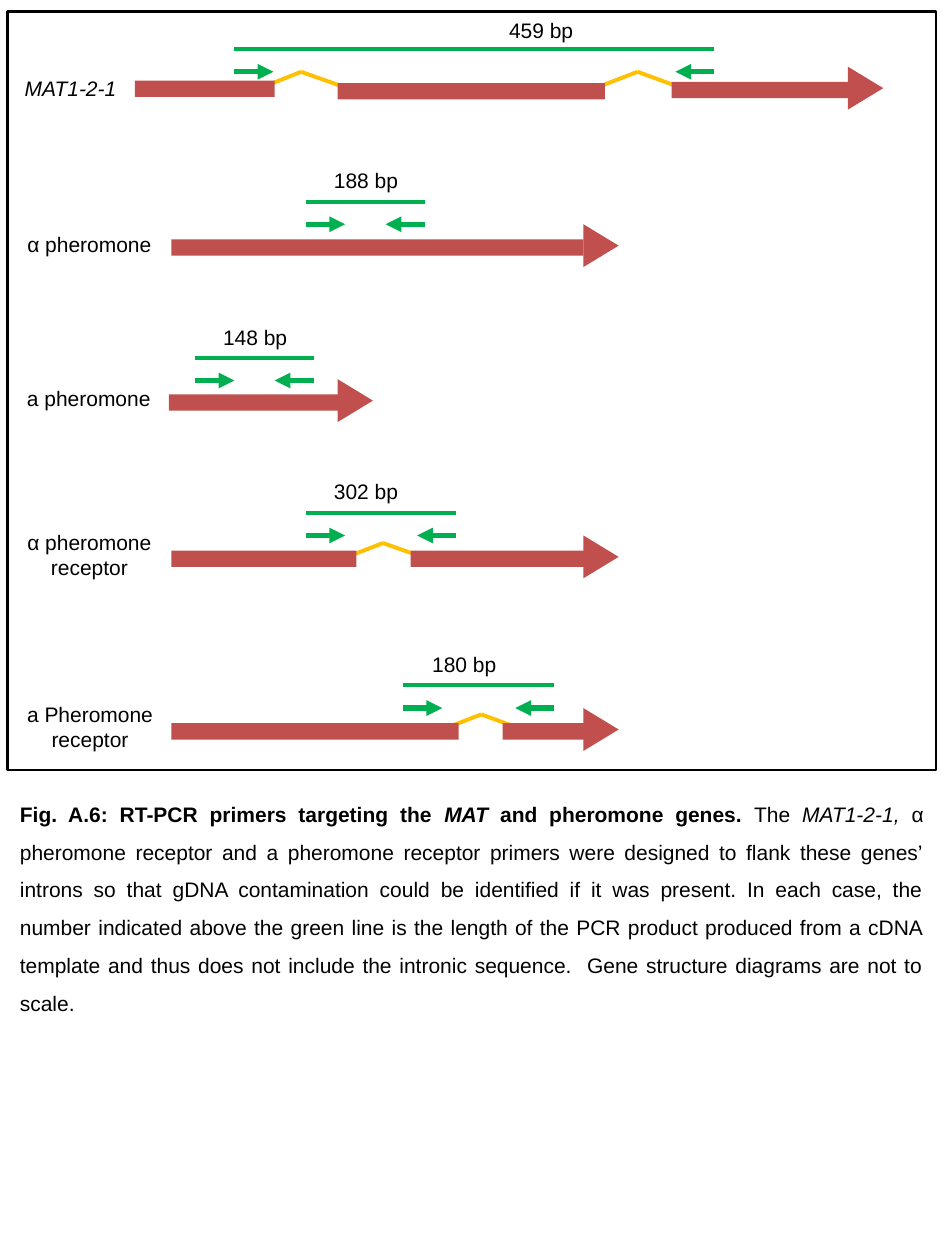
from dataclasses import dataclass
from typing import NamedTuple

from lxml import etree
from pptx import Presentation
from pptx import util as u
from pptx.dml.color import RGBColor
from pptx.enum import shapes, text
from pptx.oxml.ns import qn


@dataclass(frozen=True)
class Theme:
    font: str = "Arial"
    size: float = 12
    ink: str = "000000"
    exon: str = "C0504D"
    tip: str = "C14F4D"
    intron: str = "FFC000"
    primer: str = "00B050"
    thin: float = 2.25
    thick: float = 3
    border: float = 1.5


class Box(NamedTuple):
    left: float
    top: float
    width: float
    height: float


class Exon(NamedTuple):
    left: float
    top: float
    width: float


class Intron(NamedTuple):
    start: float
    apex: float
    end: float
    top: float


class Run(NamedTuple):
    wording: str
    bold: bool = False
    italic: bool = False


@dataclass(frozen=True)
class Gene:
    name: tuple[str, ...]
    name_box: Box
    exons: tuple[Exon, ...]
    tip_left: float
    product: str
    product_left: float
    product_top: float
    amplicon: tuple[float, float]
    amplicon_y: float
    introns: tuple[Intron, ...] = ()
    italic: bool = False


THEME = Theme()
EXON_HEIGHT = 0.13
TIP_WIDTH, TIP_HEIGHT = 0.34, 0.28
PRIMER_LENGTH = 0.31
PRIMER_DROP = 0.18
FRAME = Box(0.06, 0.09, 7.37, 6.02)
CAPTION_BOX = Box(0.06, 6.21, 7.37, 1.58)

GENES = (
    Gene(("MAT1-2-1",), Box(0.09, 0.55, 0.94, 0.3),
         (Exon(1.07, 0.64, 1.11), Exon(2.68, 0.66, 2.12), Exon(5.33, 0.65, 1.41)),
         6.7, "459 bp", 3.94, 0.09, (1.86, 5.67), 0.39,
         (Intron(2.09, 2.39, 2.7, 0.57), Intron(4.75, 5.06, 5.36, 0.57)), True),
    Gene(("α pheromone",), Box(0.11, 1.79, 1.2, 0.3), (Exon(1.36, 1.9, 3.27),),
         4.6, "188 bp", 2.55, 1.28, (2.43, 3.37), 1.6),
    Gene(("a pheromone",), Box(0.11, 3.01, 1.19, 0.3), (Exon(1.34, 3.13, 1.38),),
         2.65, "148 bp", 1.67, 2.53, (1.55, 2.49), 2.84),
    Gene(("α pheromone", "receptor"), Box(0.11, 4.15, 1.2, 0.5),
         (Exon(1.36, 4.37, 1.47), Exon(3.26, 4.37, 1.47)),
         4.6, "302 bp", 2.55, 3.75, (2.43, 3.62), 4.07,
         (Intron(2.73, 3.04, 3.35, 4.31),)),
    Gene(("a Pheromone", "receptor"), Box(0.11, 5.52, 1.21, 0.5),
         (Exon(1.36, 5.74, 2.28), Exon(3.99, 5.74, 0.74)),
         4.6, "180 bp", 3.33, 5.12, (3.2, 4.4), 5.44,
         (Intron(3.51, 3.82, 4.12, 5.67),)),
)

CAPTION = (
    Run("Fig. A.6: RT-PCR primers targeting the ", bold=True),
    Run("MAT", bold=True, italic=True),
    Run(" and pheromone genes. ", bold=True),
    Run("The "),
    Run("MAT1-2-1, ", italic=True),
    Run("α pheromone receptor and a pheromone receptor primers were designed to flank "
        "these genes’ introns so that gDNA contamination could be identified if it was "
        "present. In each case, the number indicated above the green line is the length "
        "of the PCR product produced from a cDNA template and thus does not include the "
        "intronic sequence.  Gene structure diagrams are not to scale."),
)


def inches(box: Box) -> list[u.Length]:
    return [u.Inches(length) for length in box]


def add_solid(slide, preset, box: Box, colour: str):
    solid = slide.shapes.add_shape(preset, *inches(box))
    solid.shadow.inherit = False
    solid.fill.solid()
    solid.fill.fore_color.rgb = RGBColor.from_string(colour)
    solid.line.fill.background()
    return solid


def add_line(slide, start: tuple[float, float], end: tuple[float, float],
             colour: str, width: float, arrow: bool = False) -> None:
    line = slide.shapes.add_connector(
        shapes.MSO_CONNECTOR.STRAIGHT, *(u.Inches(value) for value in start + end))
    line.line.color.rgb = RGBColor.from_string(colour)
    line.line.width = u.Pt(width)
    if arrow:
        etree.SubElement(line.line._get_or_add_ln(), qn("a:tailEnd"), type="triangle")
    etree.SubElement(line._element.spPr, qn("a:effectLst"))


def set_font(font, italic: bool | None = None) -> None:
    font.name = THEME.font
    font.size = u.Pt(THEME.size)
    font.color.rgb = RGBColor.from_string(THEME.ink)
    font.italic = italic


def add_text(slide, box: Box, wrap: bool):
    frame = slide.shapes.add_textbox(*inches(box)).text_frame
    frame.word_wrap = wrap
    frame.auto_size = text.MSO_AUTO_SIZE.SHAPE_TO_FIT_TEXT
    return frame


def add_label(slide, box: Box, lines: tuple[str, ...], italic: bool = False) -> None:
    frame = add_text(slide, box, wrap=False)
    frame.text = "\n".join(lines)
    for paragraph in frame.paragraphs:
        paragraph.alignment = text.PP_ALIGN.CENTER
        set_font(paragraph.font, italic)


def add_caption(slide) -> None:
    paragraph = add_text(slide, CAPTION_BOX, wrap=True).paragraphs[0]
    paragraph.alignment = text.PP_ALIGN.JUSTIFY
    paragraph.line_spacing = 1.5
    set_font(paragraph.font)
    for part in CAPTION:
        run = paragraph.add_run()
        run.text = part.wording
        set_font(run.font, part.italic)
        run.font.bold = part.bold


def add_gene(slide, gene: Gene) -> None:
    for intron in gene.introns:
        apex = (intron.apex, intron.top)
        add_line(slide, (intron.start, intron.top + 0.12), apex, THEME.intron, THEME.thin)
        add_line(slide, apex, (intron.end, intron.top + 0.11), THEME.intron, THEME.thin)
    for exon in gene.exons:
        add_solid(slide, shapes.MSO_SHAPE.RECTANGLE, Box(*exon, EXON_HEIGHT), THEME.exon)
    tip = add_solid(slide, shapes.MSO_SHAPE.ISOSCELES_TRIANGLE,
                    Box(gene.tip_left, gene.exons[-1].top - 0.09, TIP_WIDTH, TIP_HEIGHT),
                    THEME.tip)
    tip.rotation = 90

    left, right = gene.amplicon
    primer_y = gene.amplicon_y + PRIMER_DROP
    for outer, inner in ((left, left + PRIMER_LENGTH), (right, right - PRIMER_LENGTH)):
        add_line(slide, (outer, primer_y), (inner, primer_y),
                 THEME.primer, THEME.thick, arrow=True)
    add_line(slide, (right, gene.amplicon_y), (left, gene.amplicon_y),
             THEME.primer, THEME.thin)
    add_label(slide, Box(gene.product_left, gene.product_top, 0.71, 0.3), (gene.product,))
    add_label(slide, gene.name_box, gene.name, gene.italic)


def main() -> None:
    deck = Presentation()
    deck.slide_width, deck.slide_height = u.Inches(7.5), u.Inches(10)
    slide = deck.slides.add_slide(deck.slide_layouts[6])
    add_caption(slide)
    for gene in GENES:
        add_gene(slide, gene)
    border = slide.shapes.add_shape(shapes.MSO_SHAPE.RECTANGLE, *inches(FRAME))
    border.shadow.inherit = False
    border.fill.background()
    border.line.color.rgb = RGBColor.from_string(THEME.ink)
    border.line.width = u.Pt(THEME.border)
    deck.save("out.pptx")


if __name__ == "__main__":
    main()
